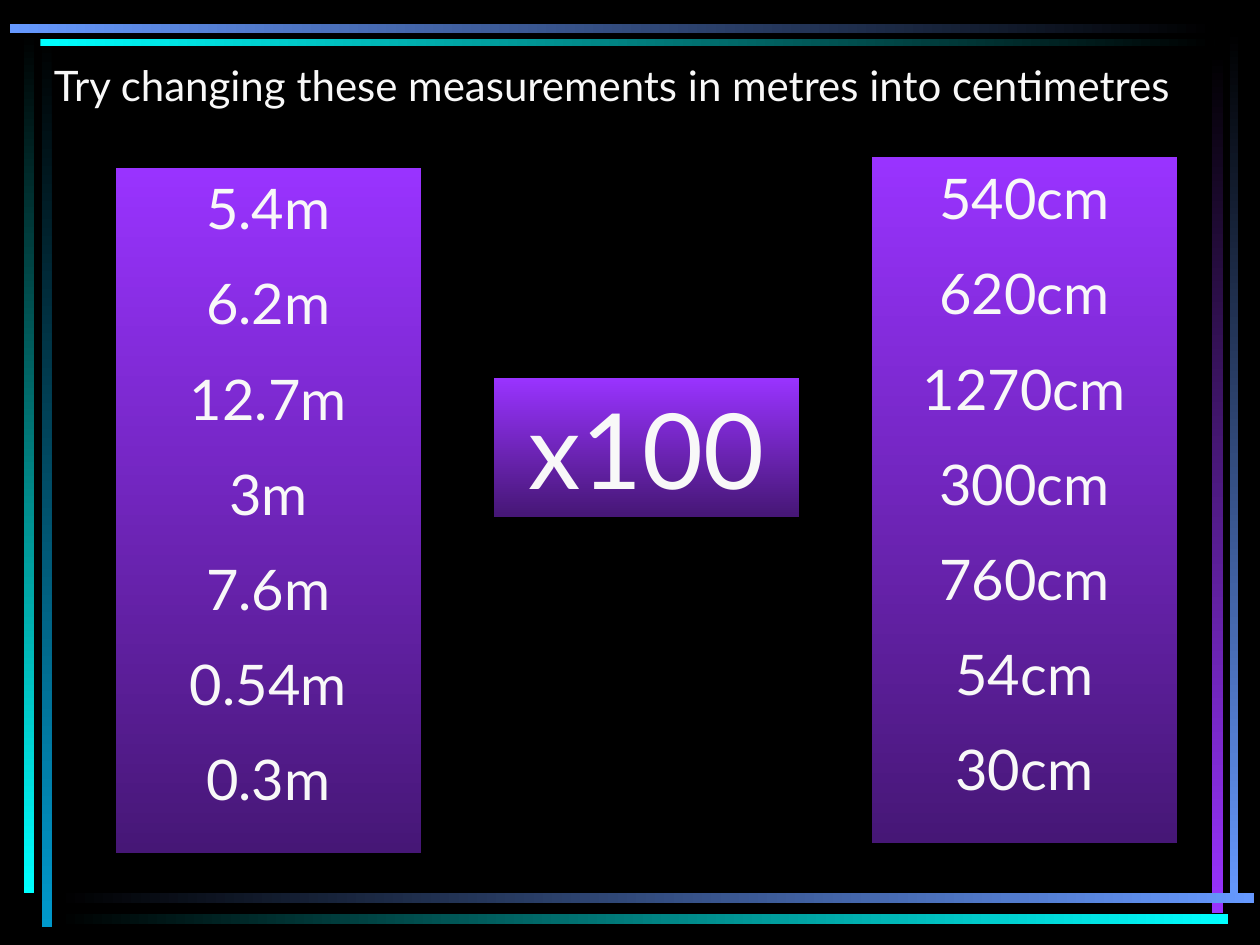
from pptx import Presentation
from pptx import util as u
from pptx.dml.color import RGBColor
from pptx.enum import shapes, text

FONT = "Lato"
COLORS = {
    "black": "000000",
    "text": "F8F8F8",
    "violet": "9933FF",
    "deep_violet": "461776",
    "blue": "6699FF",
    "cyan": "00FFFF",
    "teal": "0099CC",
}
METRES = ["5.4m", "6.2m", "12.7m", "3m", "7.6m", "0.54m", "0.3m"]
CENTIMETRES = ["540cm", "620cm", "1270cm", "300cm", "760cm", "54cm", "30cm"]
RIGHTWARD, DOWNWARD = 0, 270
FRAME_BARS = [
    ((0.33, 0.28, 0.08, 7.08), "black", "teal", DOWNWARD),
    ((0.19, 0.25, 0.08, 6.84), "black", "cyan", DOWNWARD),
    ((9.76, 0.24, 0.07, 6.93), "black", "blue", DOWNWARD),
    ((9.62, 0.42, 0.09, 6.83), "black", "violet", DOWNWARD),
    ((0.45, 7.09, 9.5, 0.08), "black", "blue", RIGHTWARD),
    ((0.45, 7.25, 9.3, 0.08), "black", "cyan", RIGHTWARD),
    ((0.32, 0.31, 9.32, 0.06), "cyan", "black", RIGHTWARD),
    ((0.08, 0.19, 9.56, 0.07), "blue", "black", RIGHTWARD),
]


def rgb(name):
    return RGBColor.from_string(COLORS[name])


def add_gradient_bar(slide, box, start, end, angle):
    bar = slide.shapes.add_shape(
        shapes.MSO_SHAPE.RECTANGLE, *(u.Inches(side) for side in box))
    bar.shadow.inherit = False
    bar.line.fill.background()
    bar.fill.gradient()
    bar.fill.gradient_angle = angle
    for stop, color in zip(bar.fill.gradient_stops, (start, end)):
        stop.color.rgb = rgb(color)
    return bar


def write_lines(holder, lines, size, align):
    frame = holder.text_frame
    frame.word_wrap = True
    frame.auto_size = text.MSO_AUTO_SIZE.SHAPE_TO_FIT_TEXT
    frame.vertical_anchor = text.MSO_ANCHOR.TOP
    for index, line in enumerate(lines):
        paragraph = frame.add_paragraph() if index else frame.paragraphs[0]
        paragraph.alignment = align
        paragraph.space_before = u.Pt(size / 2)
        run = paragraph.add_run()
        run.text = line
        run.font.name = FONT
        run.font.size = u.Pt(size)
        run.font.color.rgb = rgb("text")


def add_frame(slide):
    for box, start, end, angle in FRAME_BARS:
        add_gradient_bar(slide, box, start, end, angle)


def add_panel(slide, box, lines, size):
    panel = add_gradient_bar(slide, box, "violet", "deep_violet", DOWNWARD)
    write_lines(panel, lines, size, text.PP_ALIGN.CENTER)


def add_heading(slide, box, wording):
    heading = slide.shapes.add_textbox(*(u.Inches(side) for side in box))
    write_lines(heading, [wording], 24, text.PP_ALIGN.LEFT)


def main():
    deck = Presentation()
    deck.slide_width, deck.slide_height = u.Inches(10), u.Inches(7.5)
    slide = deck.slides.add_slide(deck.slide_layouts[6])
    slide.background.fill.solid()
    slide.background.fill.fore_color.rgb = rgb("black")

    add_frame(slide)
    add_panel(slide, (0.92, 1.33, 2.42, 5.44), METRES, 32)
    add_panel(slide, (6.92, 1.25, 2.42, 5.44), CENTIMETRES, 32)
    add_panel(slide, (3.92, 3, 2.42, 1.1), ["x100"], 60)
    add_heading(slide, (0.33, 0.42, 9.25, 0.5),
                "Try changing these measurements in metres into centimetres")
    deck.save("out.pptx")


if __name__ == "__main__":
    main()
